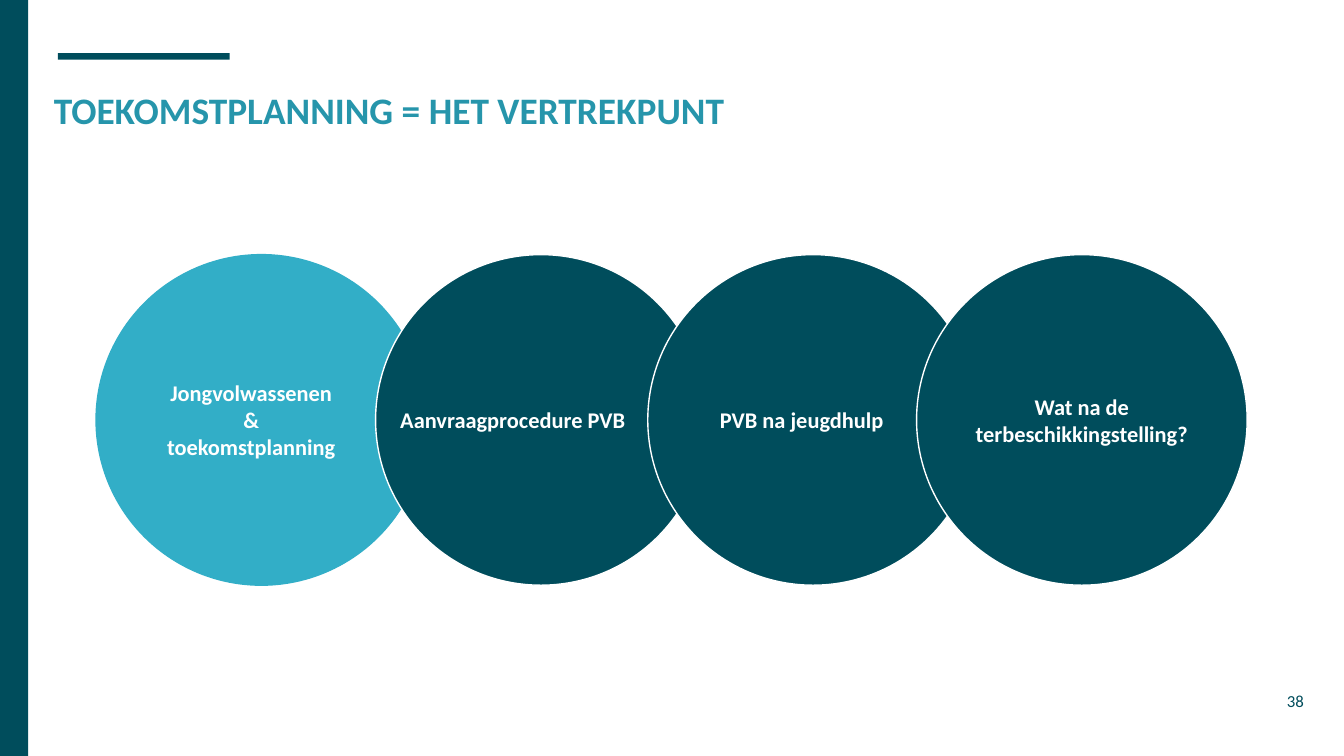
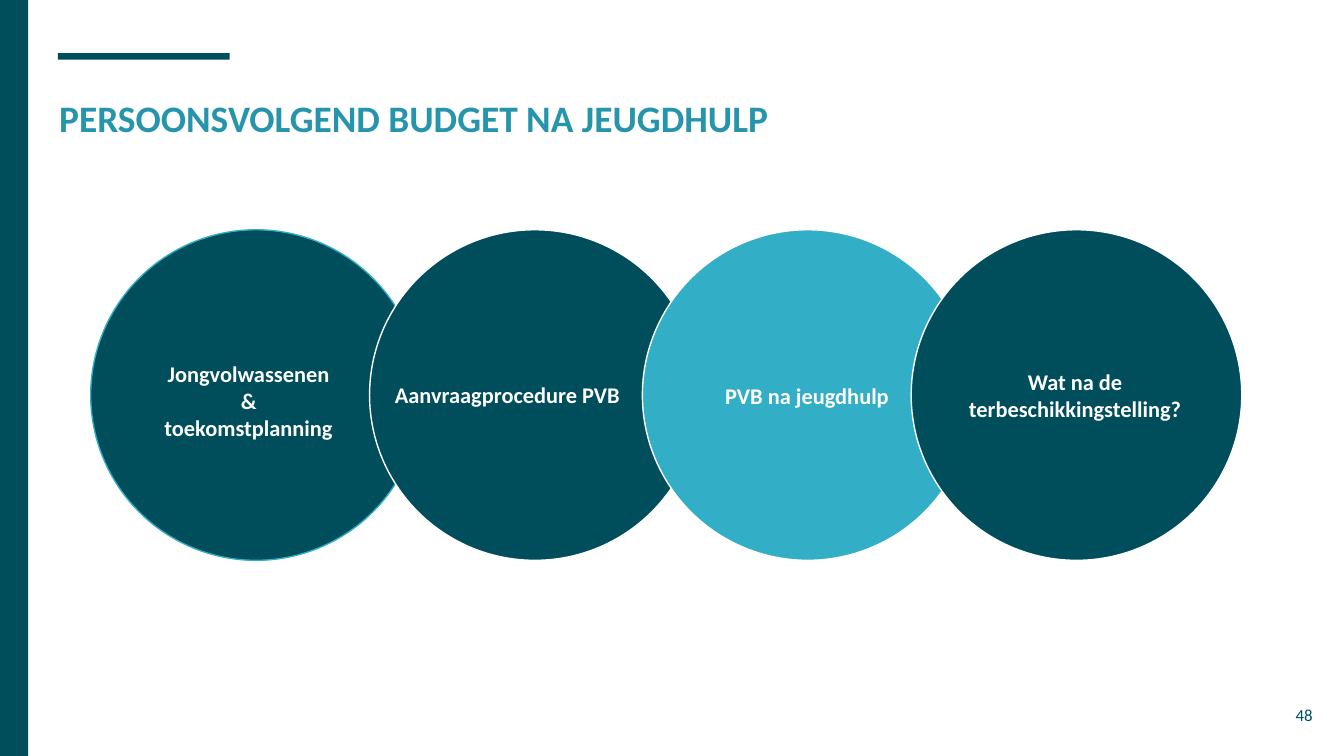
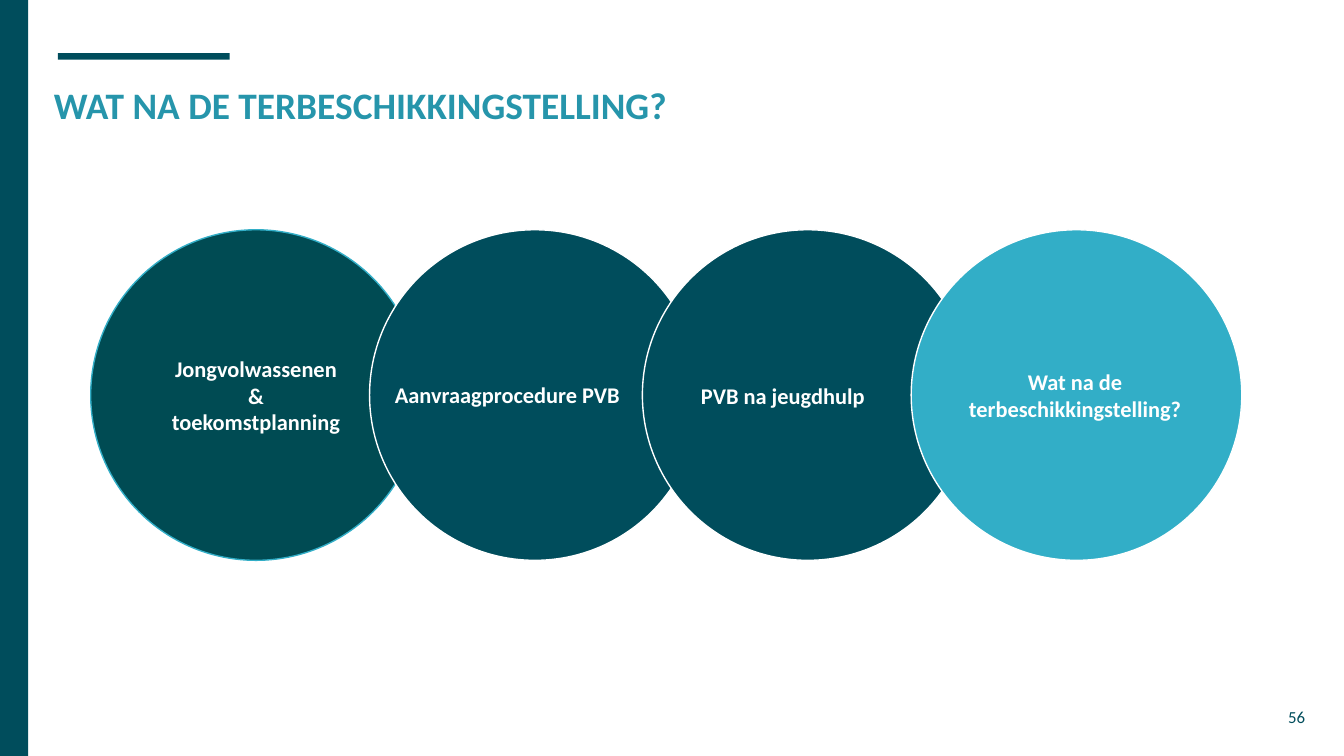
"""Builds three Dutch agenda slides, each marking one of four linked circles."""
from pptx import Presentation, util as u
from pptx.dml.color import RGBColor
from pptx.enum import shapes, text

PX = 4572
WIDE, HIGH = 2000, 1125
FONT = "Calibri"
COL = {"dark": "004D5C", "deep": "004B53", "blue": "32AEC7",
       "title": "2695AB", "white": "FFFFFF"}
MID, TOP = text.MSO_ANCHOR.MIDDLE, text.MSO_ANCHOR.TOP
LEFT, RIGHT, CENTER = text.PP_ALIGN.LEFT, text.PP_ALIGN.RIGHT, text.PP_ALIGN.CENTER
RECT, OVAL = shapes.MSO_SHAPE.RECTANGLE, shapes.MSO_SHAPE.OVAL
SIZE = 492


def write(box, words, size=12, color="white", bold=True, align=CENTER, anchor=MID):
    frame = box.text_frame
    frame.word_wrap = True
    frame.auto_size = text.MSO_AUTO_SIZE.NONE
    frame.vertical_anchor = anchor
    frame.margin_left = frame.margin_right = 20 * PX
    frame.margin_top = frame.margin_bottom = 20 * PX
    frame.text = words
    for para in frame.paragraphs:
        para.alignment = align
        for run in para.runs:
            run.font.name, run.font.size, run.font.bold = FONT, u.Pt(size), bold
            run.font.color.rgb = RGBColor.from_string(COL[color])


def draw(slide, kind, at, fill, line=None):
    shape = slide.shapes.add_shape(kind, *(n * PX for n in at))
    shape.shadow.inherit = False
    shape.fill.solid()
    shape.fill.fore_color.rgb = RGBColor.from_string(COL[fill])
    if line:
        shape.line.color.rgb = RGBColor.from_string(COL[line])
        shape.line.width = u.Pt(0.75)
    else:
        shape.line.fill.background()
    return shape


names = ["Aanvraagprocedure PVB ", "PVB na jeugdhulp",
         "Wat na de terbeschikkingstelling?",
         "Jongvolwassenen\n&\ntoekomstplanning"]
pages = [
    {"title": "TOEKOMSTPLANNING = HET VERTREKPUNT", "head": (60, 110, 1398, 94),
     "num": "38", "foot": (870 + 1000, 1011, 90, 64),
     "lefts": (143, 559, 964, 1364), "top": 379,
     "fills": ("blue", "dark", "dark", "dark"),
     "labels": [(564, 560, 406, 130), (964, 562, 458, 126),
                (1364, 592, 492, 66), (184, 569, 380, 112)]},
    {"title": "PERSOONSVOLGEND BUDGET NA JEUGDHULP", "head": (68, 122, 1864, 126),
     "num": "48", "foot": (1853, 1021, 120, 86),
     "lefts": (135, 550, 956, 1356), "top": 342,
     "fills": ("dark", "dark", "blue", "dark"),
     "labels": [(556, 522, 406, 130), (972, 525, 458, 126),
                (1354, 555, 492, 66), (159, 563, 422, 66)]},
    {"title": "WAT NA DE TERBESCHIKKINGSTELLING?", "head": (60, 102, 1398, 94),
     "num": "56", "foot": (1872, 1035, 90, 64),
     "lefts": (135, 550, 956, 1356), "top": 342,
     "fills": ("deep", "dark", "dark", "blue"),
     "labels": [(556, 522, 406, 130), (936, 525, 458, 126),
                (1354, 555, 492, 66), (170, 555, 422, 66)]},
]

deck = Presentation()
deck.slide_width, deck.slide_height = WIDE * PX, HIGH * PX
layout = deck.slide_layouts[5]
slides = [deck.slides.add_slide(layout) for page in pages]

for at in [(86, 79, 256, 10), (0, 0, 42, HIGH)]:
    layout.shapes.element.append(draw(slides[0], RECT, at, "dark").element)

for slide, page in zip(slides, pages):
    title = slide.shapes.title
    title.left, title.top, title.width, title.height = (n * PX for n in page["head"])
    write(title, page["title"], size=20, color="title", align=LEFT, anchor=TOP)

    foot = slide.shapes.add_textbox(*(n * PX for n in page["foot"]))
    write(foot, page["num"], size=9, color="dark", bold=False, align=RIGHT)

    for i, (left, fill) in enumerate(zip(page["lefts"], page["fills"])):
        draw(slide, OVAL, (left, page["top"], SIZE, SIZE), fill,
             line="white" if i else "blue")

    for name, at in zip(names, page["labels"]):
        write(slide.shapes.add_textbox(*(n * PX for n in at)), name)

deck.save("out.pptx")
